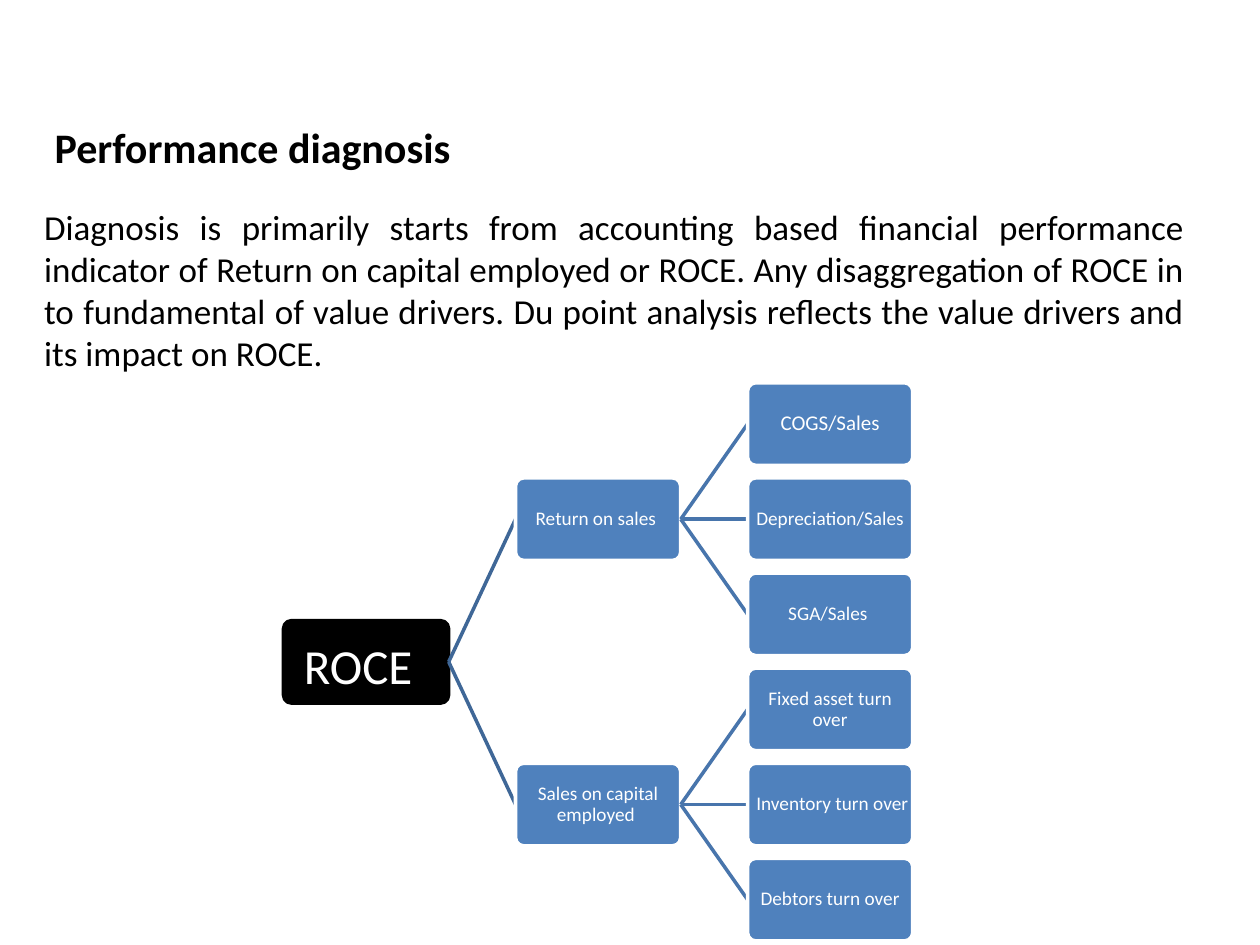
from pptx import Presentation
from pptx.dml.color import RGBColor
from pptx.enum.shapes import MSO_CONNECTOR, MSO_SHAPE
from pptx.enum.text import MSO_ANCHOR, MSO_AUTO_SIZE, PP_ALIGN
from pptx.oxml.ns import qn
from pptx.util import Pt
from lxml import etree

ROUNDED, STRAIGHT = MSO_SHAPE.ROUNDED_RECTANGLE, MSO_CONNECTOR.STRAIGHT
LEFT, CENTER, JUSTIFY = PP_ALIGN.LEFT, PP_ALIGN.CENTER, PP_ALIGN.JUSTIFY
TOP, MIDDLE = MSO_ANCHOR.TOP, MSO_ANCHOR.MIDDLE
NO_FIT = MSO_AUTO_SIZE.NONE

FONT = "Calibri"
COLORS = {"black": "000000", "white": "FFFFFF", "box": "4F81BD",
          "root_line": "3F6797", "branch_line": "4875AC"}

# Tree grid
BOX_W, BOX_H = 94.4, 47.2
TREE_X, TREE_MID = 162, 378.2
COL_STEP, ROW_STEP = 132.6, 54.35

BODY = ("Diagnosis is primarily starts from accounting based financial "
        "performance indicator of Return on capital employed or ROCE. Any "
        "disaggregation of ROCE in to fundamental of value drivers. Du point "
        "analysis reflects the value drivers and its impact on ROCE.")

# Each branch: row, label, leaves; a leaf: label, text size
BRANCHES = [
    (1, "Return on sales ",
     [("COGS/Sales", 12), ("Depreciation/Sales", 11), ("SGA/Sales ", 11)]),
    (4, "Sales on capital employed ",
     [("Fixed asset turn over", 11), (" Inventory turn over", 11),
      ("Debtors turn over", 11)]),
]


def rgb(name):
    return RGBColor.from_string(COLORS[name])


def add_run(p, text, size, color, bold=False):
    r = p.add_run()
    r.text = text
    r.font.name, r.font.size, r.font.bold = FONT, Pt(size), bold
    r.font.color.rgb = rgb(color)


def fill_placeholder(sp, box, text, size, align, bold=False):
    sp.left, sp.top, sp.width, sp.height = (Pt(v) for v in box)
    tf = sp.text_frame
    tf.word_wrap, tf.auto_size, tf.vertical_anchor = True, NO_FIT, TOP
    p = tf.paragraphs[0]
    p.alignment, p.space_before = align, Pt(0)
    # No bullet or hanging indent
    pPr = p._p.get_or_add_pPr()
    pPr.set("marL", "0")
    pPr.set("indent", "0")
    etree.SubElement(pPr, qn("a:buNone"))
    add_run(p, text, size, "black", bold)


def row_y(row):
    return TREE_MID + (row - 2.5) * ROW_STEP


def add_node(s, col, row, runs, fill="box", line="white", inset=0.7):
    sp = s.shapes.add_shape(ROUNDED, Pt(TREE_X + col * COL_STEP),
                            Pt(row_y(row) - BOX_H / 2), Pt(BOX_W), Pt(BOX_H))
    sp.adjustments[0] = 0.1
    sp.shadow.inherit = False
    sp.fill.solid()
    sp.fill.fore_color.rgb = rgb(fill)
    sp.line.color.rgb, sp.line.width = rgb(line), Pt(2)
    tf = sp.text_frame
    tf.word_wrap, tf.vertical_anchor = True, MIDDLE
    tf.margin_left = tf.margin_right = Pt(inset)
    tf.margin_top = tf.margin_bottom = Pt(inset)
    p = tf.paragraphs[0]
    p.alignment, p.line_spacing = CENTER, 0.9
    for text, size in runs:
        add_run(p, text, size, "white")


def add_link(s, col, row, child_row, color):
    x = TREE_X + col * COL_STEP + BOX_W
    c = s.shapes.add_connector(STRAIGHT, Pt(x), Pt(row_y(row)),
                               Pt(TREE_X + (col + 1) * COL_STEP),
                               Pt(row_y(child_row)))
    c.line.color.rgb, c.line.width = rgb(color), Pt(2)
    etree.SubElement(c._element.spPr, qn("a:effectLst"))


def main():
    prs = Presentation()
    prs.slide_width, prs.slide_height = Pt(720), Pt(540)
    s = prs.slides.add_slide(prs.slide_layouts[1])

    # Heading and paragraph
    fill_placeholder(s.shapes.title, (24, 66, 660, 36),
                     "Performance diagnosis", 24, LEFT, bold=True)
    fill_placeholder(s.placeholders[1], (18, 114, 666, 104), BODY, 20, JUSTIFY)

    # Driver tree: each link lies over its parent and under its child
    add_node(s, 0, 2.5, [("ROCE", 28), (" ", 40)], "black", "black", 1.3)
    for row, label, leaves in BRANCHES:
        add_link(s, 0, 2.5, row, "root_line")
        add_node(s, 1, row, [(label, 11)])
        for leaf_row, leaf in enumerate(leaves, row - 1):
            add_link(s, 1, row, leaf_row, "branch_line")
            add_node(s, 2, leaf_row, [leaf])

    prs.save("out.pptx")


if __name__ == "__main__":
    main()
